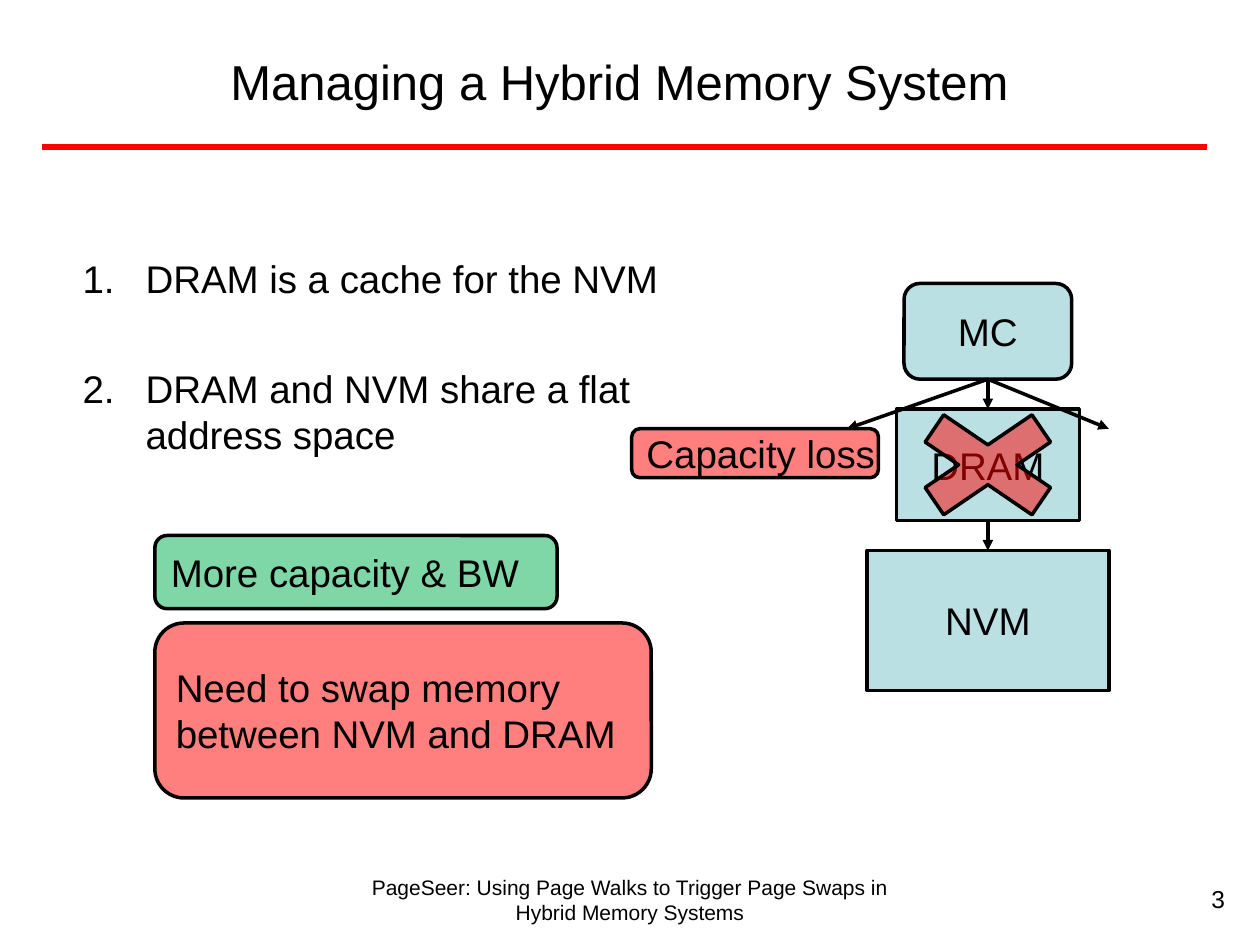
from itertools import pairwise

from lxml import etree
from pptx import Presentation
from pptx.dml.color import RGBColor
from pptx.enum.shapes import MSO_CONNECTOR, MSO_SHAPE
from pptx.enum.text import MSO_ANCHOR, MSO_AUTO_SIZE, PP_ALIGN
from pptx.oxml.ns import qn
from pptx.util import Pt

STRAIGHT = MSO_CONNECTOR.STRAIGHT
RECT, ROUNDED, CROSS = MSO_SHAPE.RECTANGLE, MSO_SHAPE.ROUNDED_RECTANGLE, MSO_SHAPE.MATH_MULTIPLY
LEFT, CENTER, RIGHT = PP_ALIGN.LEFT, PP_ALIGN.CENTER, PP_ALIGN.RIGHT
TOP, MIDDLE = MSO_ANCHOR.TOP, MSO_ANCHOR.MIDDLE

THEME = {
    "font": "Arial", "ink": "000000", "rule": "FF0000", "unit": "BBE0E3",
    "good": "00B050", "bad": "FF0000",
    "title": 28, "body": 22, "number": 14, "footer": 12,
    "outline": 2, "rule_width": 3.25, "veil": 50,
}

TITLE = "Managing a Hybrid Memory System"
SCHEMES = ["DRAM is a cache for the NVM", "DRAM and NVM share a flat address space"]
FOOTER = "PageSeer: Using Page Walks to Trigger Page Swaps in Hybrid Memory Systems"
PAGE_NUMBER = "3"
MEMORY_STACK = [("MC", ROUNDED, 95.8, 54.7), ("DRAM", RECT, 104.5, 63.7), ("NVM", RECT, 138.3, 80)]
VERDICTS = [
    (["Capacity loss"], "bad", (361, 245, 141, 28)),
    (["More capacity & BW"], "good", (88.5, 306, 229.8, 41.8)),
    (["Need to swap memory", "between NVM and DRAM"], "bad", (88.5, 356, 283.7, 100)),
]
STACK_CENTER, STACK_TOP, STACK_GAP = 564.5, 162, 17.1
CROSS_SIZE = (117.4, 80)
FAN_ENDS = [(484, 245), (633.6, 245)]


def color(key):
    return RGBColor.from_string(THEME[key])


def place(shape, box):
    shape.left, shape.top, shape.width, shape.height = (Pt(v) for v in box)


def write(shape, lines, size, align=LEFT, anchor=TOP, wrap=True):
    frame = shape.text_frame
    frame.auto_size = MSO_AUTO_SIZE.NONE
    frame.word_wrap, frame.vertical_anchor = wrap, anchor
    for i, line in enumerate(lines):
        paragraph = frame.add_paragraph() if i else frame.paragraphs[0]
        paragraph.alignment = align
        paragraph.space_before = Pt(0)
        run = paragraph.add_run()
        run.text = line
        run.font.name, run.font.size = THEME["font"], Pt(THEME[size])
        run.font.color.rgb = color("ink")
    return frame


def add_label(slide, text, box, size, align):
    write(slide.shapes.add_textbox(*(Pt(v) for v in box)), [text], size, align)


def add_block(slide, kind, box, fill, opacity=100):
    block = slide.shapes.add_shape(kind, *(Pt(v) for v in box))
    block.shadow.inherit = False
    block.fill.solid()
    block.fill.fore_color.rgb = color(fill)
    if opacity < 100:
        tint = block.fill._xPr.find(qn("a:solidFill"))[0]
        etree.SubElement(tint, qn("a:alpha"), val=str(opacity * 1000))
    block.line.color.rgb = color("ink")
    block.line.width = Pt(THEME["outline"])
    return block


def add_line(slide, start, end, ink="ink", width="outline", arrow=True):
    line = slide.shapes.add_connector(STRAIGHT, *(Pt(v) for v in (*start, *end)))
    line.line.color.rgb = color(ink)
    line.line.width = Pt(THEME[width])
    if arrow:
        etree.SubElement(line.line._get_or_add_ln(), qn("a:tailEnd"), type="triangle")
    etree.SubElement(line._element.spPr, qn("a:effectLst"))


def add_schemes(body):
    place(body, (36, 108.7, 380.9, 370.8))
    frame = write(body, SCHEMES, "body")
    frame.margin_top = Pt(37)
    for i, paragraph in enumerate(frame.paragraphs):
        paragraph.space_before = Pt(36.4 if i else 0)
        props = paragraph._p.get_or_add_pPr()
        props.set("marL", str(Pt(40)))
        props.set("indent", str(Pt(-36)))
        etree.SubElement(props, qn("a:buFont"), typeface=THEME["font"])
        etree.SubElement(props, qn("a:buAutoNum"), type="arabicPeriod")


def add_memory_stack(slide):
    boxes, top = [], STACK_TOP
    for name, kind, width, height in MEMORY_STACK:
        boxes.append((STACK_CENTER - width / 2, top, width, height))
        unit = add_block(slide, kind, boxes[-1], "unit")
        write(unit, [name], "body", CENTER, MIDDLE, wrap=False)
        top += height + STACK_GAP

    controller, dram, _ = boxes
    width, height = CROSS_SIZE
    cross_top = dram[1] + (dram[3] - height) / 2
    add_block(slide, CROSS, (STACK_CENTER - width / 2, cross_top, width, height), "bad", THEME["veil"])

    for upper, lower in pairwise(boxes):
        add_line(slide, (STACK_CENTER, upper[1] + upper[3]), (STACK_CENTER, lower[1]))
    for end in FAN_ENDS:
        add_line(slide, (STACK_CENTER, controller[1] + controller[3]), end)


def main():
    """Build the hybrid memory management slide."""
    deck = Presentation()
    deck.slide_width, deck.slide_height = Pt(720), Pt(540)
    slide = deck.slides.add_slide(deck.slide_layouts[1])
    title, body = slide.placeholders

    add_label(slide, FOOTER, (200.9, 496, 318.2, 53.3), "footer", CENTER)
    add_line(slide, (24, 84), (690, 84), "rule", "rule_width", arrow=False)
    place(title, (36, 7.2, 635.8, 77.8))
    write(title, [TITLE], "title", CENTER, MIDDLE)
    add_schemes(body)
    add_label(slide, PAGE_NUMBER, (539.3, 501.8, 167.8, 37.4), "number", RIGHT)

    add_memory_stack(slide)
    for lines, fill, box in VERDICTS:
        verdict = add_block(slide, ROUNDED, box, fill, THEME["veil"])
        write(verdict, lines, "body", LEFT, MIDDLE, wrap=False)
    deck.save("out.pptx")


if __name__ == "__main__":
    main()
